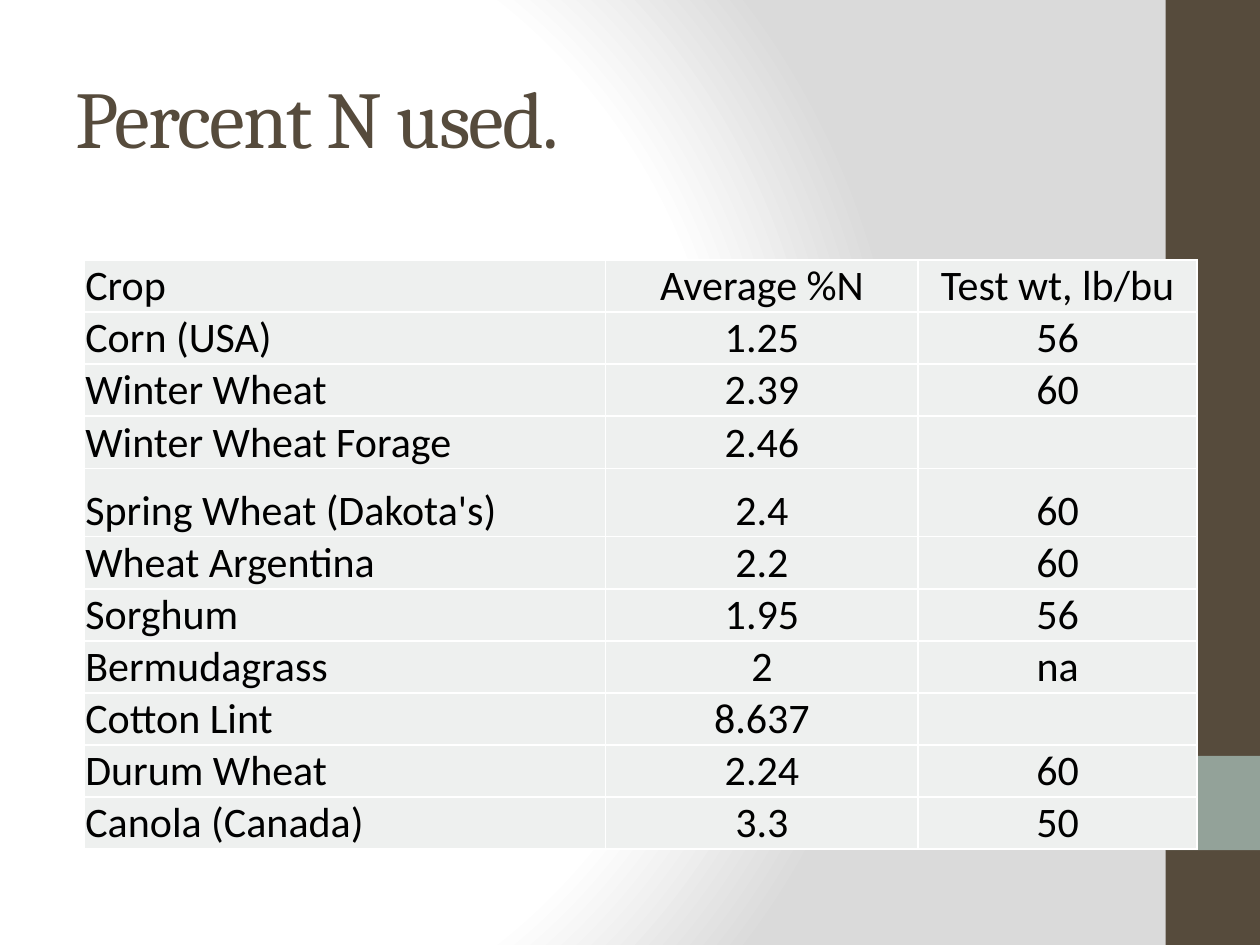
from dataclasses import dataclass

from lxml import etree
from pptx import Presentation
from pptx.dml.color import RGBColor
from pptx.enum.shapes import MSO_SHAPE
from pptx.enum.text import MSO_ANCHOR, PP_ALIGN
from pptx.oxml import parse_xml
from pptx.oxml.ns import nsdecls, qn
from pptx.util import Cm, Pt

RECTANGLE = MSO_SHAPE.RECTANGLE
LEFT, CENTER = PP_ALIGN.LEFT, PP_ALIGN.CENTER
MIDDLE, BOTTOM = MSO_ANCHOR.MIDDLE, MSO_ANCHOR.BOTTOM
BLANK_LAYOUT = 6


@dataclass(frozen=True)
class Theme:
    brown: str = "564B3C"
    sage: str = "93A299"
    cell: str = "EEF0EF"
    white: str = "FFFFFF"
    gray: str = "DADADA"
    black: str = "000000"
    title_font: str = "Cambria"
    body_font: str = "Calibri"
    title_size: int = 46
    body_size: int = 24


THEME = Theme()
SLIDE_WIDTH, SLIDE_HEIGHT = Cm(25.4), Cm(19.05)
BAND_LEFT, BAND_WIDTH = Cm(23.5), Cm(1.9)
COLUMN_WIDTHS = (10.51, 6.3, 5.62)
ROW_HEIGHT, TALL_ROW_HEIGHT = Cm(1.05), Cm(1.38)
TALL_ROW = 4
CROPS = (
    ("Crop", "Average %N", "Test wt, lb/bu"),
    ("Corn (USA)", "1.25", "56"),
    ("Winter Wheat", "2.39", "60"),
    ("Winter Wheat Forage", "2.46", ""),
    ("Spring Wheat (Dakota's)", "2.4", "60"),
    ("Wheat Argentina", "2.2", "60"),
    ("Sorghum", "1.95", "56"),
    ("Bermudagrass", "2", "na"),
    ("Cotton Lint", "8.637", ""),
    ("Durum Wheat", "2.24", "60"),
    ("Canola (Canada)", "3.3", "50"),
)


def set_background(slide):
    stops = "".join(
        f'<a:gs pos="{position * 1000}"><a:srgbClr val="{color}"/></a:gs>'
        for position, color in ((0, THEME.white), (75, THEME.white), (100, THEME.gray))
    )
    background = parse_xml(
        f'<p:bg {nsdecls("p", "a")}><p:bgPr><a:gradFill rotWithShape="1">'
        f'<a:gsLst>{stops}</a:gsLst><a:path path="circle">'
        '<a:fillToRect l="20000" t="50000" r="100000" b="50000"/></a:path>'
        "</a:gradFill><a:effectLst/></p:bgPr></p:bg>"
    )
    slide.element.cSld.insert(0, background)


def add_block(slide, top, height, color):
    shape = slide.shapes.add_shape(RECTANGLE, BAND_LEFT, top, BAND_WIDTH, height)
    shape.shadow.inherit = False
    shape.fill.solid()
    shape.fill.fore_color.rgb = RGBColor.from_string(color)
    shape.line.fill.background()


def write_text(frame, text, *, font, size, color, align=LEFT, spacing=0):
    paragraph = frame.paragraphs[0]
    paragraph.alignment = align
    run = paragraph.add_run()
    run.text = text
    run.font.name = font
    run.font.size = Pt(size)
    run.font.color.rgb = RGBColor.from_string(color)
    if spacing:
        run.font._element.set("spc", str(spacing * 100))


def add_title(slide, text):
    frame = slide.shapes.add_textbox(Cm(1.27), Cm(0.76), Cm(21.16), Cm(3.18)).text_frame
    frame.word_wrap = True
    frame.vertical_anchor = MIDDLE
    write_text(frame, text, font=THEME.title_font, size=THEME.title_size,
               color=THEME.brown, spacing=-1)


def set_borders(cell):
    properties = cell._tc.get_or_add_tcPr()
    for index, side in enumerate(("lnL", "lnR", "lnT", "lnB")):
        line = etree.Element(qn(f"a:{side}"), w=str(Pt(1)))
        fill = etree.SubElement(line, qn("a:solidFill"))
        etree.SubElement(fill, qn("a:srgbClr"), val=THEME.white)
        properties.insert(index, line)


def format_cell(cell):
    cell.fill.solid()
    cell.fill.fore_color.rgb = RGBColor.from_string(THEME.cell)
    cell.vertical_anchor = BOTTOM
    cell.margin_left = cell.margin_right = cell.margin_top = Cm(0.02)
    cell.margin_bottom = Cm(0)
    set_borders(cell)


def add_crop_table(slide):
    frame = slide.shapes.add_table(
        len(CROPS), len(COLUMN_WIDTHS), Cm(1.7), Cm(5.24),
        Cm(sum(COLUMN_WIDTHS)), ROW_HEIGHT * (len(CROPS) - 1) + TALL_ROW_HEIGHT,
    )
    table = frame.table
    table.first_row = table.horz_banding = False
    for column, width in zip(table.columns, COLUMN_WIDTHS):
        column.width = Cm(width)
    for row_index, values in enumerate(CROPS):
        row = table.rows[row_index]
        row.height = TALL_ROW_HEIGHT if row_index == TALL_ROW else ROW_HEIGHT
        for column_index, text in enumerate(values):
            cell = row.cells[column_index]
            format_cell(cell)
            if text:
                write_text(cell.text_frame, text, font=THEME.body_font,
                           size=THEME.body_size, color=THEME.black,
                           align=CENTER if column_index else LEFT)


def main():
    presentation = Presentation()
    presentation.slide_width, presentation.slide_height = SLIDE_WIDTH, SLIDE_HEIGHT
    slide = presentation.slides.add_slide(presentation.slide_layouts[BLANK_LAYOUT])
    set_background(slide)
    add_block(slide, Cm(0), SLIDE_HEIGHT, THEME.brown)
    add_block(slide, Cm(15.24), BAND_WIDTH, THEME.sage)
    add_title(slide, "Percent N used.")
    add_crop_table(slide)
    presentation.save("out.pptx")


if __name__ == "__main__":
    main()
